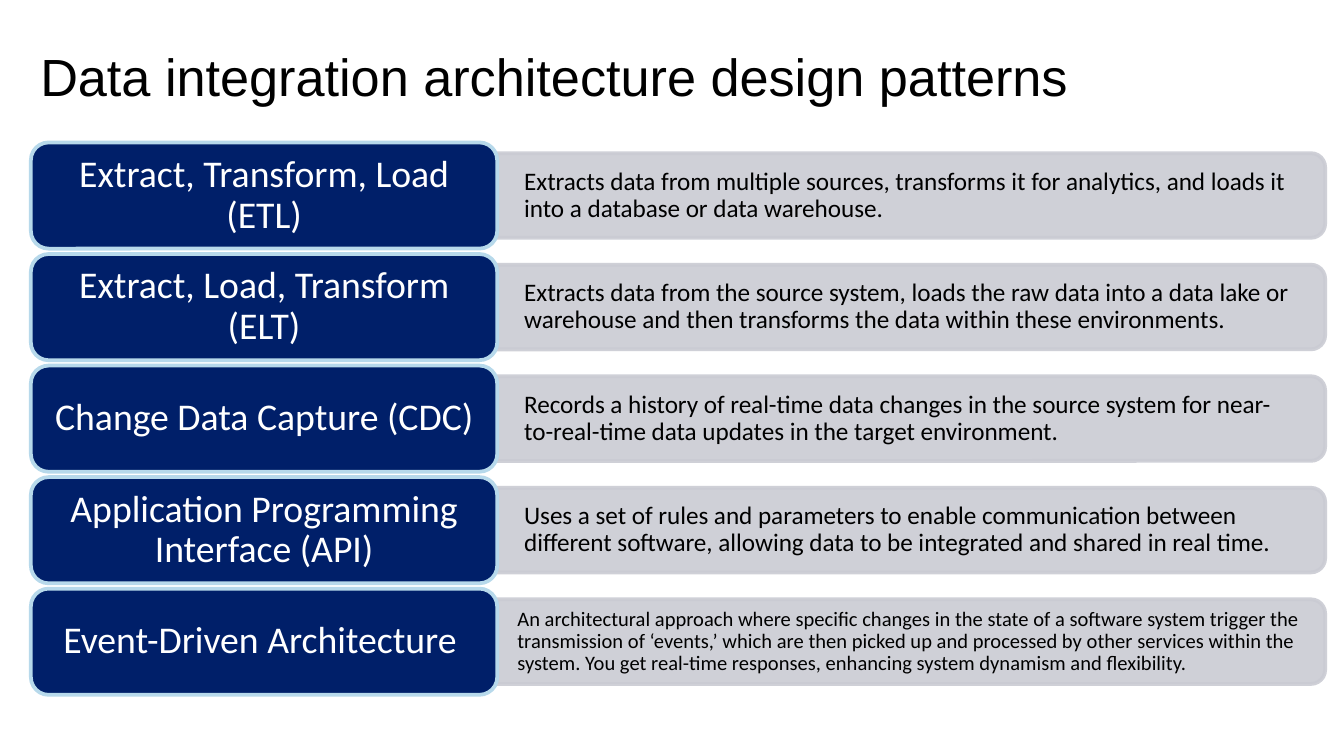
from lxml import etree
from pptx import Presentation
from pptx.dml.color import RGBColor
from pptx.enum.shapes import MSO_SHAPE
from pptx.enum.text import MSO_ANCHOR, PP_ALIGN
from pptx.oxml.ns import qn
from pptx.util import Inches, Pt

LABEL_SHAPE = MSO_SHAPE.ROUNDED_RECTANGLE
BAR_SHAPE = MSO_SHAPE.ROUND_2_SAME_RECTANGLE
MIDDLE = MSO_ANCHOR.MIDDLE
LEFT, CENTER = PP_ALIGN.LEFT, PP_ALIGN.CENTER

COLORS = {
    "black": "000000",
    "white": "FFFFFF",
    "navy": "001F69",
    "sky": "B7D9EB",
    "gray": "CACBD3",
}

PATTERNS = [
    ("Extract, Transform, Load (ETL)",
     "Extracts data from multiple sources, transforms it for analytics, "
     "and loads it into a database or data warehouse."),
    ("Extract, Load, Transform (ELT)",
     "Extracts data from the source system, loads the raw data into a data lake "
     "or warehouse and then transforms the data within these environments."),
    ("Change Data Capture (CDC)",
     "Records a history of real-time data changes in the source system for "
     "near-to-real-time data updates in the target environment."),
    ("Application Programming Interface (API)",
     "Uses a set of rules and parameters to enable communication between "
     "different software, allowing data to be integrated and shared in real time."),
    ("Event-Driven Architecture ",
     "An architectural approach where specific changes in the state of a software "
     "system trigger the transmission of ‘events,’ which are then picked up and "
     "processed by other services within the system. You get real-time responses, "
     "enhancing system dynamism and flexibility."),
]

TOP, PITCH = 1.06, 0.83
LABEL_X, LABEL_W, LABEL_H = 0.23, 3.47, 0.79
BAR_X, BAR_W, BAR_H = 3.7, 6.16, 0.63
TEXT_W, TEXT_H = 6.12, 0.57
LONG_TEXT = 200


def rgb(name):
    return RGBColor.from_string(COLORS[name])


def set_text(sp, text, size, color="black", font="Calibri", align=LEFT, inset=(0.2, 0.1)):
    tf = sp.text_frame
    tf.word_wrap = True
    tf.vertical_anchor = MIDDLE
    tf.margin_left = tf.margin_right = Inches(inset[0])
    tf.margin_top = tf.margin_bottom = Inches(inset[1])
    p = tf.paragraphs[0]
    p.alignment = align
    p.line_spacing = 0.9
    r = p.add_run()
    r.text = text
    r.font.size = Pt(size)
    r.font.name = font
    r.font.color.rgb = rgb(color)


def add_text(s, x, y, w, h, text, size, **fmt):
    sp = s.shapes.add_textbox(Inches(x), Inches(y), Inches(w), Inches(h))
    set_text(sp, text, size, **fmt)


def add_box(s, kind, x, y, w, h, fill, line):
    sp = s.shapes.add_shape(kind, Inches(x), Inches(y), Inches(w), Inches(h))
    sp.shadow.inherit = False
    sp.adjustments[0] = 0.167
    sp.fill.solid()
    sp.fill.fore_color.rgb = rgb(fill)
    sp.line.color.rgb = rgb(line)
    sp.line.width = Pt(2)
    return sp


def set_opacity(sp, percent):
    for color in sp.element.spPr.iter(qn("a:srgbClr")):
        etree.SubElement(color, qn("a:alpha"), val=str(percent * 1000))


def add_bar(s, mid_y):
    x = BAR_X + (BAR_W - BAR_H) / 2
    sp = add_box(s, BAR_SHAPE, x, mid_y - BAR_W / 2, BAR_H, BAR_W, "gray", "gray")
    sp.rotation = 90
    set_opacity(sp, 90)


def add_description(s, mid_y, text):
    y = mid_y - TEXT_H / 2
    if len(text) > LONG_TEXT:
        add_text(s, BAR_X - 0.05, y, 6.56, TEXT_H, text, 11)
    else:
        add_text(s, BAR_X, y, TEXT_W, TEXT_H, text, 13.5)


def add_label(s, y, text):
    sp = add_box(s, LABEL_SHAPE, LABEL_X, y, LABEL_W, LABEL_H, "navy", "sky")
    set_text(sp, text, 20.2, color="white", align=CENTER, inset=(0.09, 0.04))


def main():
    prs = Presentation()
    prs.slide_width = Inches(10)
    prs.slide_height = prs.slide_width * 9 // 16
    s = prs.slides.add_slide(prs.slide_layouts[6])
    add_text(s, 0.23, -0.02, 7.9, 1.23, "Data integration architecture design patterns",
             28, font="Arial", inset=(0.07, 0.04))
    for i, (name, description) in enumerate(PATTERNS):
        y = TOP + i * PITCH
        mid_y = y + LABEL_H / 2
        add_bar(s, mid_y)
        add_description(s, mid_y, description)
        add_label(s, y, name)
    prs.save("out.pptx")


if __name__ == "__main__":
    main()
